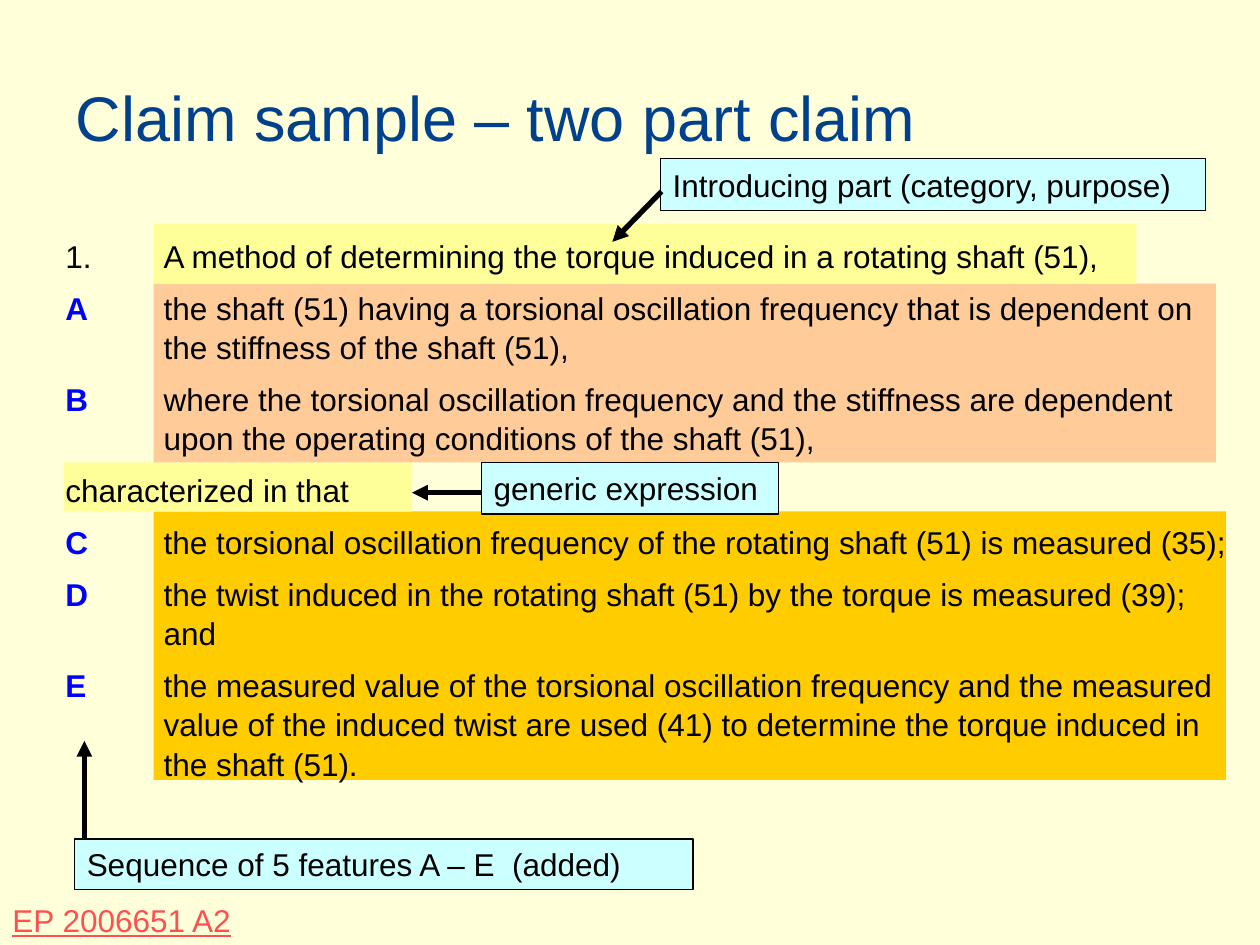
from pptx import Presentation
from pptx.dml.color import RGBColor
from pptx.enum.shapes import MSO_CONNECTOR, MSO_SHAPE
from pptx.enum.text import MSO_ANCHOR, PP_ALIGN
from pptx.oxml.ns import qn
from pptx.util import Inches, Pt
from lxml import etree

RECT = MSO_SHAPE.RECTANGLE
STRAIGHT = MSO_CONNECTOR.STRAIGHT
TOP, MIDDLE = MSO_ANCHOR.TOP, MSO_ANCHOR.MIDDLE
LEFT = PP_ALIGN.LEFT

COLUMNS, ROWS = 100, 75
CREAM, YELLOW, PEACH, GOLD, CYAN = "FFFFD9", "FFFF99", "FFCC99", "FFCC00", "CCFFFF"
BLACK, BLUE, NAVY, RED = "000000", "0000FF", "00408C", "FF5050"


def rgb(value):
    return RGBColor.from_string(value)


class ClaimSlide:
    font = "Arial"
    size = 18
    hanging = Inches(0.78)

    def __init__(self, prs):
        self.column = prs.slide_width / COLUMNS
        self.row = prs.slide_height / ROWS
        self.slide = prs.slides.add_slide(prs.slide_layouts[5])
        self.shapes = self.slide.shapes
        fill = self.slide.background.fill
        fill.solid()
        fill.fore_color.rgb = rgb(CREAM)

    def place(self, x, y, *extent):
        lengths = (x, y) + extent
        units = (self.column, self.row) * 2
        return [round(n * unit) for n, unit in zip(lengths, units)]

    def run(self, p, text, color=BLACK, size=None, bold=False, underline=False):
        r = p.add_run()
        r.text = text
        r.font.name = self.font
        r.font.size = Pt(size or self.size)
        r.font.color.rgb = rgb(color)
        r.font.bold = bold
        r.font.underline = underline

    def frame(self, shape, anchor):
        tf = shape.text_frame
        tf.word_wrap = True
        tf.vertical_anchor = anchor
        tf.paragraphs[0].alignment = LEFT
        return tf

    def title(self, text, *box):
        s = self.shapes.title
        s.left, s.top, s.width, s.height = self.place(*box)
        self.run(self.frame(s, MIDDLE).paragraphs[0], text, NAVY, 36)

    def panel(self, color, *box):
        s = self.shapes.add_shape(RECT, *self.place(*box))
        s.shadow.inherit = False
        s.fill.solid()
        s.fill.fore_color.rgb = rgb(color)
        s.line.fill.background()
        return s

    def callout(self, text, *box):
        s = self.panel(CYAN, *box)
        s.line.color.rgb = rgb(BLACK)
        s.line.width = Pt(0.75)
        self.run(self.frame(s, MIDDLE).paragraphs[0], text)

    def label(self, text, *box):
        s = self.shapes.add_textbox(*self.place(*box))
        self.run(self.frame(s, TOP).paragraphs[0], text, RED, underline=True)

    def claim(self, features, *box):
        tf = self.frame(self.shapes.add_textbox(*self.place(*box)), TOP)
        for i, (letter, text) in enumerate(features):
            p = tf.add_paragraph() if i else tf.paragraphs[0]
            p.alignment = LEFT
            p.line_spacing = 1.04
            if i:
                p.space_before = Pt(0.4 * self.size)
            pPr = p._p.get_or_add_pPr()
            pPr.set("marL", str(self.hanging))
            pPr.set("indent", str(-self.hanging))
            if letter:
                self.run(p, letter, BLUE, bold=True)
            self.run(p, text)

    def arrow(self, start, end):
        c = self.shapes.add_connector(STRAIGHT, *self.place(*start), *self.place(*end))
        c.line.color.rgb = rgb(BLACK)
        c.line.width = Pt(3)
        etree.SubElement(c.line._get_or_add_ln(), qn("a:tailEnd"), type="triangle")
        etree.SubElement(c._element.spPr, qn("a:effectLst"))


def main():
    prs = Presentation()
    prs.slide_width, prs.slide_height = Inches(10), Inches(7.5)
    s = ClaimSlide(prs)

    s.panel(GOLD, 12.2, 40.6, 85.1, 21.3)
    s.panel(YELLOW, 5.1, 36.7, 27.6, 3.9)
    s.panel(PEACH, 12.2, 22.5, 84.3, 14.2)
    s.panel(YELLOW, 12.2, 17.8, 78, 4.7)

    s.claim([
        ("", "1. \tA method of determining the torque induced in a rotating shaft (51),"),
        ("A", "\tthe shaft (51) having a torsional oscillation frequency that is "
              "dependent on the stiffness of the shaft (51),"),
        ("B", "\twhere the torsional oscillation frequency and the stiffness are "
              "dependent upon the operating conditions of the shaft (51),"),
        ("", "characterized in that"),
        ("C", "\tthe torsional oscillation frequency of the rotating shaft (51) "
              "is measured (35);"),
        ("D", "\tthe twist induced in the rotating shaft (51) by the torque "
              "is measured (39); and"),
        ("E", "\tthe measured value of the torsional oscillation frequency and "
              "the measured value of the induced twist are used (41) to determine "
              "the torque induced in the shaft (51)."),
    ], 4.2, 18.2, 95, 47.6)

    s.title("Claim sample – two part claim", 5, 3, 90, 12.5)
    s.label("EP 2006651 A2", 0, 71, 26, 4)

    s.callout("Introducing part (category, purpose)", 52.4, 12.6, 43.3, 4.1)
    s.arrow((52.5, 15.2), (48.6, 19.2))
    s.callout("Sequence of 5 features A – E  (added)", 5.9, 66.6, 49.1, 4)
    s.arrow((6.7, 66.6), (6.7, 58.8))
    s.callout("generic expression", 38.2, 36.7, 23.6, 4.1)
    s.arrow((38.2, 39.1), (32.7, 39.1))

    prs.save("out.pptx")


if __name__ == "__main__":
    main()
